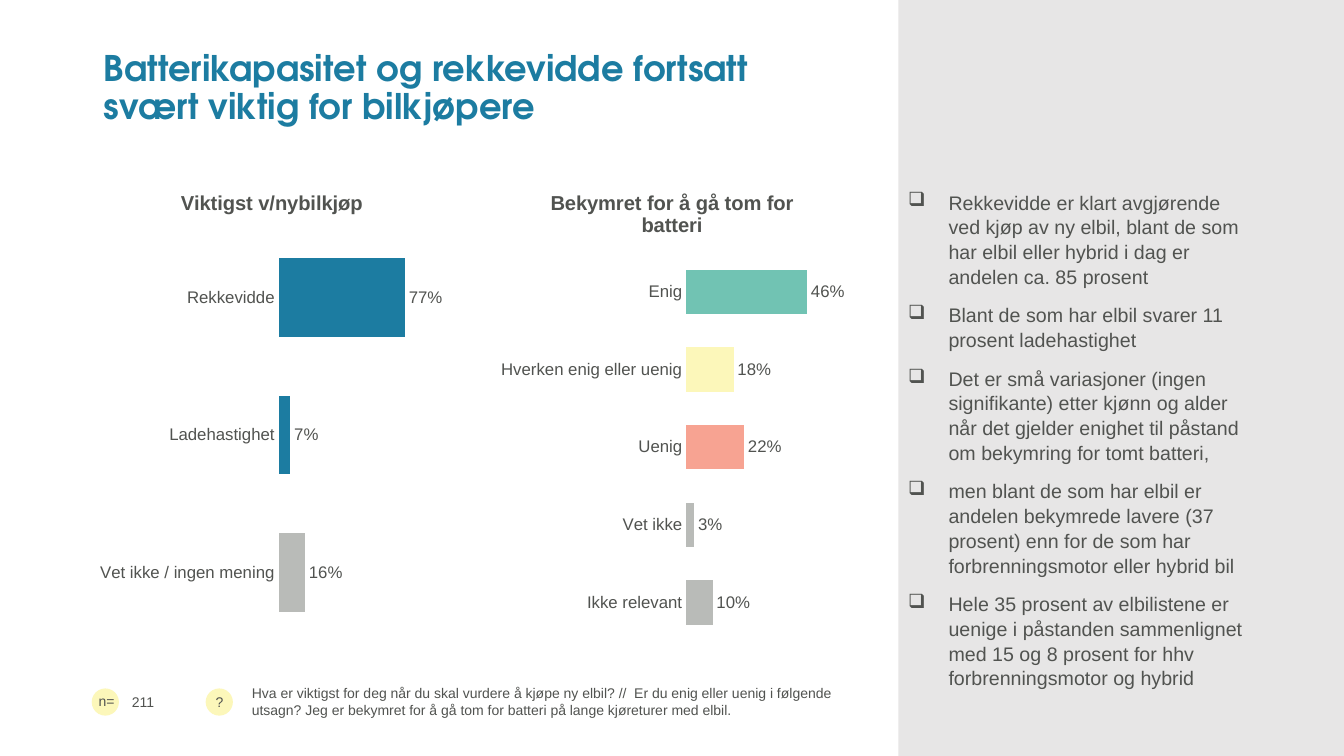
import lxml.etree
import pptx
import pptx.chart.data
import pptx.dml.color
import pptx.enum.chart
import pptx.enum.shapes
import pptx.enum.text
import pptx.oxml
import pptx.oxml.ns
import pptx.util

Inches = pptx.util.Inches
Pt = pptx.util.Pt
RGBColor = pptx.dml.color.RGBColor
MSO_SHAPE = pptx.enum.shapes.MSO_SHAPE
MSO_ANCHOR = pptx.enum.text.MSO_ANCHOR
qn = pptx.oxml.ns.qn

BLUE = RGBColor(0x1C, 0x7C, 0xA1)
GREEN = RGBColor(0x71, 0xC3, 0xB3)
YELLOW = RGBColor(0xFC, 0xF7, 0xBA)
CORAL = RGBColor(0xF7, 0xA3, 0x92)
GREY = RGBColor(0xB9, 0xBB, 0xB8)
PANEL = RGBColor(0xE7, 0xE6, 0xE6)
TEXT = RGBColor(0x51, 0x53, 0x50)

BODY_FONT = "Arial"
TITLE_FONT = "TeX Gyre Adventor"

PRIORITIES = [
    ("Rekkevidde", 0.77, BLUE),
    ("Ladehastighet", 0.07, BLUE),
    ("Vet ikke / ingen mening", 0.16, GREY),
]
WORRIES = [
    ("Enig", 0.46, GREEN),
    ("Hverken enig eller uenig", 0.18, YELLOW),
    ("Uenig", 0.22, CORAL),
    ("Vet ikke", 0.03, GREY),
    ("Ikke relevant", 0.10, GREY),
]
FINDINGS = [
    "Rekkevidde er klart avgjørende ved kjøp av ny elbil, blant de som har "
    "elbil eller hybrid i dag er andelen ca. 85 prosent",
    "Blant de som har elbil svarer 11 prosent ladehastighet",
    "Det er små variasjoner (ingen signifikante) etter kjønn og alder når det "
    "gjelder enighet til påstand om bekymring for tomt batteri,",
    "men blant de som har elbil er andelen bekymrede lavere (37 prosent) enn "
    "for de som har forbrenningsmotor eller hybrid bil",
    "Hele 35 prosent av elbilistene er uenige i påstanden sammenlignet med "
    "15 og 8 prosent for hhv forbrenningsmotor og hybrid",
]
QUESTION = (
    "Hva er viktigst for deg når du skal vurdere å kjøpe ny elbil? //  "
    "Er du enig eller uenig i følgende utsagn? Jeg er bekymret for å gå tom "
    "for batteri på lange kjøreturer med elbil."
)


def style_font(font, size, color=TEXT, name=BODY_FONT, bold=False):
    font.size = Pt(size)
    font.color.rgb = color
    font.name = name
    font.bold = bold


def add_title(slide, text):
    title = slide.shapes.title
    title.left, title.top = Inches(0.93), Inches(0.39)
    title.width, title.height = Inches(7.51), Inches(0.92)
    frame = title.text_frame
    frame.text = text
    frame.word_wrap = True
    frame.auto_size = pptx.enum.text.MSO_AUTO_SIZE.NONE
    frame.vertical_anchor = MSO_ANCHOR.BOTTOM
    heading = frame.paragraphs[0]
    heading.alignment = pptx.enum.text.PP_ALIGN.LEFT
    heading.line_spacing = 0.9
    style_font(heading.font, 25.2, BLUE, TITLE_FONT, bold=True)


def add_filled_shape(slide, preset, left, top, width, height, color):
    shape = slide.shapes.add_shape(
        preset, Inches(left), Inches(top), Inches(width), Inches(height))
    shape.shadow.inherit = False
    shape.fill.solid()
    shape.fill.fore_color.rgb = color
    shape.line.fill.background()


def add_note(slide, text, left, top, width, height, anchor=MSO_ANCHOR.MIDDLE):
    frame = slide.shapes.add_textbox(
        Inches(left), Inches(top), Inches(width), Inches(height)).text_frame
    frame.word_wrap = True
    frame.vertical_anchor = anchor
    frame.text = text
    style_font(frame.paragraphs[0].font, 10)


def add_findings(slide, findings):
    frame = slide.shapes.add_textbox(
        Inches(8.91), Inches(1.83), Inches(3.53), Inches(5.27)).text_frame
    frame.word_wrap = True
    for index, finding in enumerate(findings):
        paragraph = frame.add_paragraph() if index else frame.paragraphs[0]
        paragraph.text = finding
        paragraph.line_spacing = 1.05
        if index:
            paragraph.space_before = Pt(10)
        properties = paragraph._p.get_or_add_pPr()
        properties.set("marL", str(Inches(0.4)))
        properties.set("indent", str(-Inches(0.4)))
        bullet = lxml.etree.SubElement(properties, qn("a:buChar"))
        bullet.set("char", "❑")
        style_font(paragraph.font, 14)


def set_plot_area(chart, x, y, w, h):
    """Fix the inner plot area, in fractions of the chart."""
    plot_area = chart._chartSpace.chart.plotArea
    for old in plot_area.findall(qn("c:layout")):
        plot_area.remove(old)
    layout = lxml.etree.Element(qn("c:layout"))
    manual = lxml.etree.SubElement(layout, qn("c:manualLayout"))
    settings = [("layoutTarget", "inner"), ("xMode", "edge"), ("yMode", "edge"),
                ("x", x), ("y", y), ("w", w), ("h", h)]
    for tag, value in settings:
        lxml.etree.SubElement(manual, qn("c:" + tag)).set("val", str(value))
    plot_area.insert(0, layout)


def add_bar_chart(slide, heading, answers, left, width, maximum, plot_box):
    data = pptx.chart.data.CategoryChartData(number_format="0%")
    data.categories = [label for label, _, _ in answers]
    data.add_series("Series 1", [share for _, share, _ in answers])
    chart = slide.shapes.add_chart(
        pptx.enum.chart.XL_CHART_TYPE.BAR_CLUSTERED, Inches(left), Inches(1.7),
        Inches(width), Inches(4.76), data).chart
    style_font(chart.font, 12)
    chart.has_legend = False
    chart.has_title = True
    chart.chart_title.text_frame.text = heading
    chart.chart_title.include_in_layout = False
    style_font(chart.chart_title.text_frame.paragraphs[0].font, 14.4, bold=True)

    categories = chart.category_axis
    categories.reverse_order = True
    categories.major_tick_mark = pptx.enum.chart.XL_TICK_MARK.NONE
    categories.format.line.fill.background()
    shares = chart.value_axis
    shares.visible = False
    shares.has_major_gridlines = False
    shares.minimum_scale, shares.maximum_scale = 0, maximum
    shares.major_unit = 0.2

    plot = chart.plots[0]
    plot.gap_width = 75
    plot.vary_by_categories = False
    bars = plot.series[0]
    bars.format.fill.solid()
    bars.format.fill.fore_color.rgb = GREEN
    for index, (_, _, color) in enumerate(answers):
        fill = bars.points[index].format.fill
        fill.solid()
        fill.fore_color.rgb = color
    labels = bars.data_labels
    labels.show_value = True
    labels.number_format = "0%"
    labels.number_format_is_linked = False
    labels.position = pptx.enum.chart.XL_LABEL_POSITION.OUTSIDE_END
    style_font(labels.font, 12)
    set_plot_area(chart, *plot_box)


def main():
    deck = pptx.Presentation()
    deck.slide_width, deck.slide_height = Inches(13.33), Inches(7.5)
    slide = deck.slides.add_slide(deck.slide_layouts[5])

    for badge_left in (2.04, 0.91):
        add_filled_shape(slide, MSO_SHAPE.OVAL, badge_left, 6.83, 0.27, 0.27, YELLOW)
    add_note(slide, "n=", 0.88, 6.82, 0.45, 0.27, MSO_ANCHOR.TOP)
    add_note(slide, "?", 2.04, 6.83, 0.3, 0.27, MSO_ANCHOR.TOP)
    add_title(slide, "Batterikapasitet og rekkevidde fortsatt svært viktig for bilkjøpere")
    add_bar_chart(slide, "Viktigst v/nybilkjøp", PRIORITIES,
                  0.93, 3.53, 1.0, (0.52, 0.12, 0.46, 0.86))
    add_note(slide, QUESTION, 2.4, 6.67, 6.04, 0.58)
    add_note(slide, "211", 1.21, 6.83, 0.74, 0.27)
    add_bar_chart(slide, "Bekymret for å gå tom for batteri", WORRIES,
                  4.89, 3.55, 0.6, (0.54, 0.17, 0.44, 0.81))
    add_filled_shape(slide, MSO_SHAPE.RECTANGLE, 8.91, 0, 4.42, 7.5, PANEL)
    add_findings(slide, FINDINGS)
    deck.save("out.pptx")


if __name__ == "__main__":
    main()
